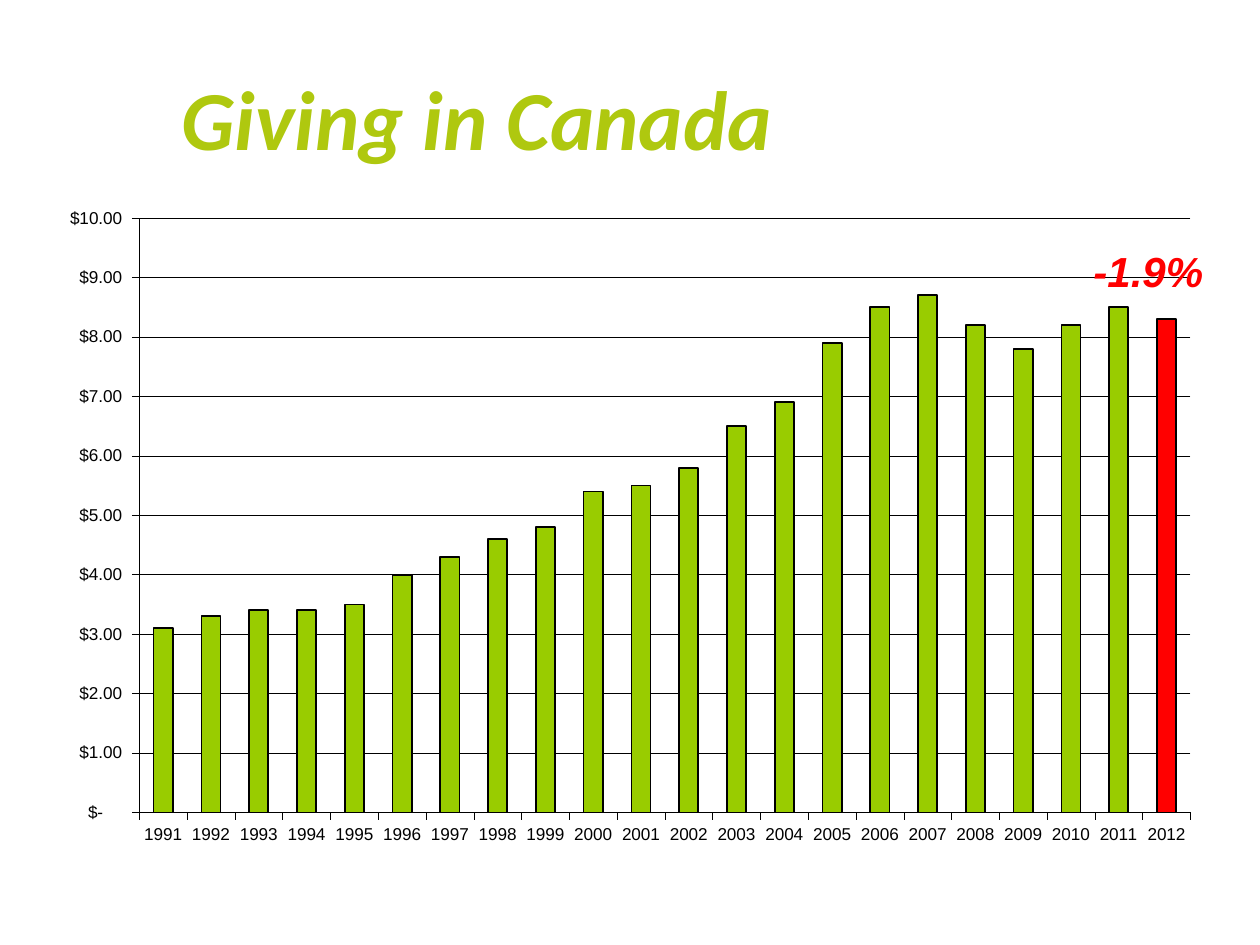
from dataclasses import dataclass

from lxml.etree import SubElement
from pptx import Presentation
from pptx.chart.data import CategoryChartData
from pptx.dml.color import RGBColor
from pptx.enum.chart import XL_CHART_TYPE, XL_TICK_MARK
from pptx.enum.text import MSO_ANCHOR, MSO_AUTO_SIZE, PP_ALIGN
from pptx.oxml.ns import qn
from pptx.util import Inches, Pt

COLUMNS, ROWS = 100, 75
FIRST_YEAR = 1991
GIVING = [3.1, 3.3, 3.4, 3.4, 3.5, 4, 4.3, 4.6, 4.8, 5.4, 5.5,
          5.8, 6.5, 6.9, 7.9, 8.5, 8.7, 8.2, 7.8, 8.2, 8.5, 8.3]
DOLLAR_FORMAT = '_("$"* #,##0.00_);_("$"* \\(#,##0.00\\);_("$"* "-"??_);_(@_)'


@dataclass(frozen=True)
class Theme:
    title_font: str = "Calibri"
    body_font: str = "Arial"
    title_color: str = "AFC80F"
    bar_color: str = "99CC00"
    accent: str = "FF0000"
    ink: str = "000000"
    paper: str = "FFFFFF"
    title_size: float = 48
    callout_size: float = 24
    axis_size: float = 9.8
    thin: float = 0.25
    outline: float = 1


def format_font(font, name, size, color, bold=False, italic=False):
    font.name, font.size = name, Pt(size)
    font.bold, font.italic = bold, italic
    font.color.rgb = RGBColor.from_string(color)


def write_text(frame, text, align=PP_ALIGN.LEFT, **font_format):
    paragraph = frame.paragraphs[0]
    paragraph.alignment = align
    run = paragraph.add_run()
    run.text = text
    format_font(run.font, **font_format)


def paint(fill, color):
    fill.solid()
    fill.fore_color.rgb = RGBColor.from_string(color)


def draw_line(line, color, width):
    paint(line.fill, color)
    line.width = Pt(width)


def place_plot(chart, **shares):
    """Fix the inner plot area as x, y, w and h shares of the chart."""
    plot_area = chart.element.find(".//" + qn("c:plotArea"))
    layout = plot_area.find(qn("c:layout"))
    if layout is None:
        layout = SubElement(plot_area, qn("c:layout"))
        plot_area.insert(0, layout)
    manual = SubElement(layout, qn("c:manualLayout"))
    settings = {"layoutTarget": "inner", "xMode": "edge", "yMode": "edge", **shares}
    for tag, value in settings.items():
        SubElement(manual, qn(f"c:{tag}")).set("val", str(value))


class SlideBuilder:
    def __init__(self, presentation, theme):
        self.theme = theme
        self.column = presentation.slide_width / COLUMNS
        self.row = presentation.slide_height / ROWS
        self.slide = presentation.slides.add_slide(presentation.slide_layouts[5])
        paint(self.slide.background.fill, theme.paper)

    def box(self, column, row, columns, rows):
        return (round(column * self.column), round(row * self.row),
                round(columns * self.column), round(rows * self.row))

    def title(self, text, *cells):
        theme, shape = self.theme, self.slide.shapes.title
        shape.left, shape.top, shape.width, shape.height = self.box(*cells)
        shape.text_frame.vertical_anchor = MSO_ANCHOR.MIDDLE
        write_text(shape.text_frame, text, name=theme.title_font,
                   size=theme.title_size, color=theme.title_color,
                   bold=True, italic=True)

    def callout(self, text, *cells):
        theme = self.theme
        frame = self.slide.shapes.add_textbox(*self.box(*cells)).text_frame
        frame.word_wrap = False
        frame.auto_size = MSO_AUTO_SIZE.SHAPE_TO_FIT_TEXT
        write_text(frame, text, name=theme.body_font, size=theme.callout_size,
                   color=theme.accent, bold=True, italic=True)

    def column_chart(self, categories, values, highlight, *cells):
        theme = self.theme
        data = CategoryChartData()
        data.categories = categories
        data.add_series("Series 1", values)
        chart = self.slide.shapes.add_chart(
            XL_CHART_TYPE.COLUMN_CLUSTERED, *self.box(*cells), data).chart
        chart.has_legend = chart.has_title = False
        format_font(chart.font, theme.body_font, theme.axis_size, theme.ink)
        place_plot(chart, x=0.076, y=0.099, w=0.924, h=0.832)

        for axis in (chart.category_axis, chart.value_axis):
            axis.major_tick_mark = XL_TICK_MARK.OUTSIDE
            axis.minor_tick_mark = XL_TICK_MARK.NONE
            draw_line(axis.format.line, theme.ink, theme.thin)
            format_font(axis.tick_labels.font, theme.body_font,
                        theme.axis_size, theme.ink)
        axis = chart.value_axis
        axis.minimum_scale, axis.maximum_scale, axis.major_unit = 0, 10, 1
        axis.tick_labels.number_format = DOLLAR_FORMAT
        axis.tick_labels.number_format_is_linked = False
        draw_line(axis.major_gridlines.format.line, theme.ink, theme.thin)

        plot = chart.plots[0]
        plot.gap_width, plot.vary_by_categories = 150, False
        series = plot.series[0]
        series.invert_if_negative = False
        for part, color in ((series, theme.bar_color),
                            (series.points[highlight], theme.accent)):
            paint(part.format.fill, color)
            draw_line(part.format.line, theme.ink, theme.outline)


def main():
    presentation = Presentation()
    presentation.slide_width, presentation.slide_height = Inches(10), Inches(7.5)
    builder = SlideBuilder(presentation, Theme())
    years = [str(FIRST_YEAR + offset) for offset in range(len(GIVING))]
    builder.title("Giving in Canada", 13.4, 3, 86.6, 12.5)
    builder.column_chart(years, GIVING, len(GIVING) - 1, 4.2, 11.7, 90.3, 56.7)
    builder.callout("-1.9%", 85.8, 19, 10.8, 5)
    presentation.save("out.pptx")


if __name__ == "__main__":
    main()
